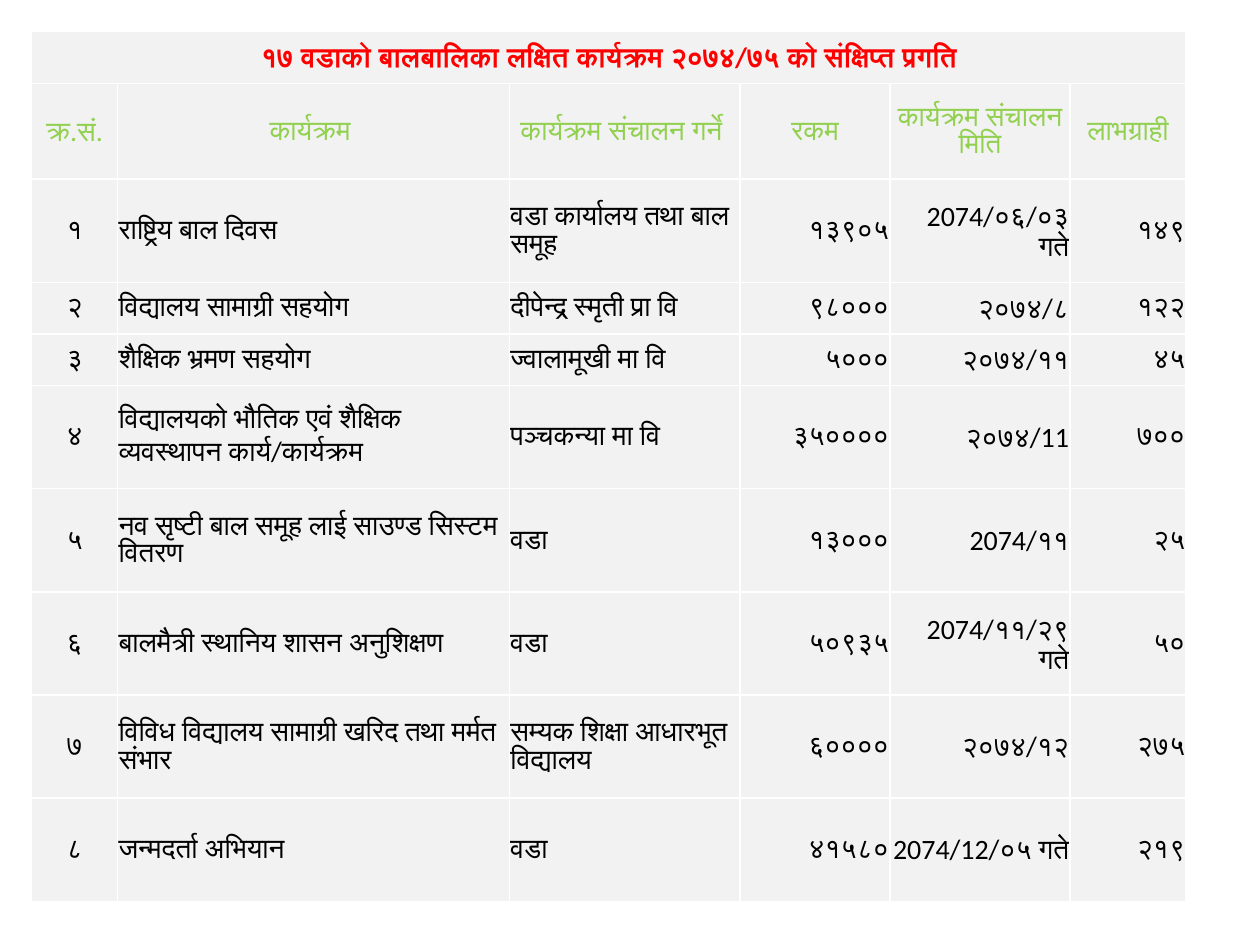
"""Build a slide with a progress table of ward programmes for children."""
from lxml.etree import SubElement
from pptx import Presentation
from pptx.dml.color import RGBColor
from pptx.enum.text import MSO_ANCHOR as Anchor, PP_ALIGN as Align
from pptx.oxml.ns import qn
from pptx.util import Cm, Pt

TITLE = "१७ वडाको बालबालिका लक्षित कार्यक्रम २०७४/७५ को संक्षिप्त प्रगति"
HEADERS = ["क्र.सं.", "कार्यक्रम ", "कार्यक्रम संचालन गर्ने ", "रकम",
           "कार्यक्रम संचालन मिति", "लाभग्राही"]
PROGRAMMES = [
    ("१", "राष्ट्रिय बाल दिवस", "वडा कार्यालय तथा बाल समूह", "१३९०५", "2074/०६/०३ गते", "१४९"),
    ("२", "विद्यालय सामाग्री सहयोग", "दीपेन्द्र स्मृती प्रा वि", "९८०००", "२०७४/८", "१२२"),
    ("३", "शैक्षिक भ्रमण सहयोग", "ज्वालामूखी मा वि", "५०००", "२०७४/११", "४५"),
    ("४", "विद्यालयको भौतिक एवं शैक्षिक व्यवस्थापन कार्य/कार्यक्रम", "पञ्चकन्या मा वि",
     "३५००००", "२०७४/11", "७००"),
    ("५", "नव सृष्टी बाल समूह लाई साउण्ड सिस्टम वितरण", "वडा", "१३०००", "2074/११", "२५"),
    ("६", "बालमैत्री स्थानिय शासन अनुशिक्षण", "वडा", "५०९३५", "2074/११/२९ गते", "५०"),
    ("७", "विविध विद्यालय सामाग्री खरिद तथा मर्मत संभार", "सम्यक शिक्षा आधारभूत विद्यालय",
     "६००००", "२०७४/१२", "२७५"),
    ("८", "जन्मदर्ता अभियान", "वडा", "४१५८०", "2074/12/०५ गते", "२१९"),
]
COLUMN_WIDTHS = [1.73, 7.9, 4.65, 3.02, 3.63, 2.34]
SHORT, TALL, HEADER = 1.04, 2.08, 1.93
ROW_HEIGHTS = [SHORT, HEADER, TALL, SHORT, SHORT] + [TALL] * 5
COLUMN_ALIGNS = [Align.CENTER, Align.LEFT, Align.LEFT] + [Align.RIGHT] * 3
CENTERED = [Align.CENTER] * len(HEADERS)
CELL_FORMAT = {
    "margin_left": Cm(0.02), "margin_right": Cm(0.02), "margin_top": Cm(0.02),
    "margin_bottom": Cm(0), "vertical_anchor": Anchor.MIDDLE,
}
FONT_FORMAT = {"name": "Calibri", "size": Pt(16)}
GREY, WHITE, RED, GREEN, BLACK = "F2F2F2", "FFFFFF", "FF0000", "92D050", "000000"


def color(value):
    """Return the colour for a hex string."""
    return RGBColor.from_string(value)


def apply_format(target, values):
    """Set every named attribute on the target."""
    for name, value in values.items():
        setattr(target, name, value)


def add_borders(cell):
    """Give the cell a thin white line on each side."""
    properties = cell._tc.get_or_add_tcPr()
    for index, side in enumerate(("a:lnL", "a:lnR", "a:lnT", "a:lnB")):
        line = properties.makeelement(qn(side), {"w": str(Pt(1))})
        SubElement(SubElement(line, qn("a:solidFill")), qn("a:srgbClr"), val=WHITE)
        properties.insert(index, line)


def style_cell(cell):
    """Apply the fill, margins and borders shared by all cells."""
    apply_format(cell, CELL_FORMAT)
    cell.fill.solid()
    cell.fill.fore_color.rgb = color(GREY)
    add_borders(cell)


def write_cell(cell, text, align, text_color, bold=False):
    """Write one formatted run into the cell."""
    paragraph = cell.text_frame.paragraphs[0]
    paragraph.alignment = align
    run = paragraph.add_run()
    run.text = text
    apply_format(run.font, {**FONT_FORMAT, "bold": bold})
    run.font.color.rgb = color(text_color)


def main():
    """Create the presentation and save it."""
    presentation = Presentation()
    apply_format(presentation, {"slide_width": Cm(25.4), "slide_height": Cm(19.05)})
    slide = presentation.slides.add_slide(presentation.slide_layouts[6])
    table = slide.shapes.add_table(
        len(ROW_HEIGHTS), len(COLUMN_WIDTHS), Cm(0.64), Cm(0.64),
        Cm(sum(COLUMN_WIDTHS)), Cm(sum(ROW_HEIGHTS))).table
    apply_format(table, {"first_row": False, "horz_banding": False})
    for column, width in zip(table.columns, COLUMN_WIDTHS):
        column.width = Cm(width)
    for row, height in zip(table.rows, ROW_HEIGHTS):
        row.height = Cm(height)
        for cell in row.cells:
            style_cell(cell)

    table.cell(0, 0).merge(table.cell(0, len(HEADERS) - 1))
    write_cell(table.cell(0, 0), TITLE, Align.CENTER, RED, bold=True)
    for row_index, texts in enumerate([HEADERS] + PROGRAMMES, start=1):
        is_header = row_index == 1
        aligns = CENTERED if is_header else COLUMN_ALIGNS
        for column_index, (text, align) in enumerate(zip(texts, aligns)):
            write_cell(table.cell(row_index, column_index), text, align,
                       GREEN if is_header else BLACK)
    presentation.save("out.pptx")


if __name__ == "__main__":
    main()
